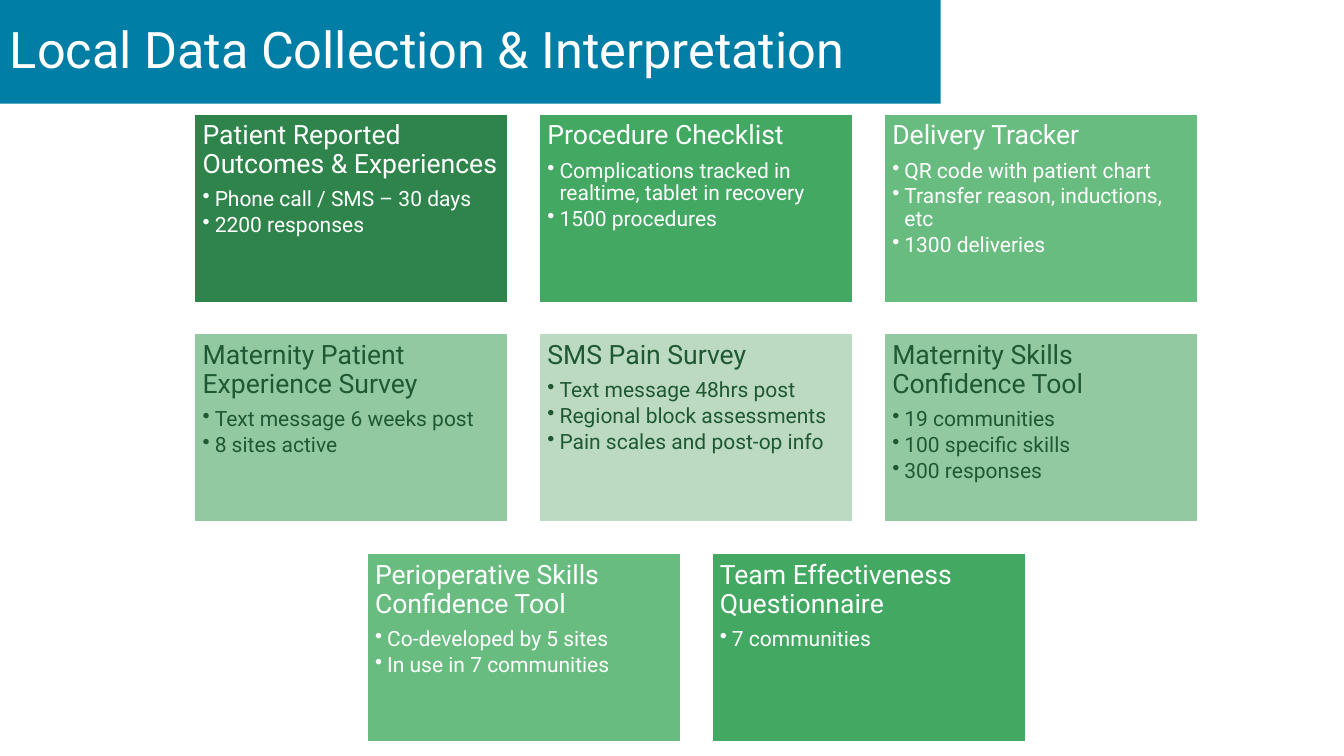
import pptx
import pptx.util
import pptx.oxml.ns
import pptx.dml.color
import pptx.enum.shapes
import pptx.enum.text
import lxml.etree
from dataclasses import dataclass

Inches = pptx.util.Inches
Pt = pptx.util.Pt


@dataclass(frozen=True)
class Theme:
    font: str = "Roboto"
    title: int = 36
    head: int = 19
    body: int = 15
    blue: str = "007EA5"
    white: str = "FFFFFF"
    ink: str = "1F5933"
    forest: str = "2E844B"
    green: str = "42A862"
    mid: str = "68BC7F"
    light: str = "93C9A1"
    pale: str = "BCDAC2"


THEME = Theme()
CARD_W, CARD_H = 3.11, 1.87
STEP_X, STEP_Y = 3.42, 2.18
LEFT, TOP = 1.93, 1.13
COLS = 3

ROWS = [
    [
        (THEME.forest, THEME.white, "Patient Reported Outcomes & Experiences",
         ["Phone call / SMS – 30 days", "2200 responses"]),
        (THEME.green, THEME.white, "Procedure Checklist",
         ["Complications tracked in realtime, tablet in recovery", "1500 procedures"]),
        (THEME.mid, THEME.white, "Delivery Tracker",
         ["QR code with patient chart", "Transfer reason, inductions, etc",
          "1300 deliveries"]),
    ],
    [
        (THEME.light, THEME.ink, "Maternity Patient Experience Survey",
         ["Text message 6 weeks post", "8 sites active"]),
        (THEME.pale, THEME.ink, "SMS Pain Survey",
         ["Text message 48hrs post", "Regional block assessments",
          "Pain scales and post-op info"]),
        (THEME.light, THEME.ink, "Maternity Skills Confidence Tool",
         ["19 communities", "100 specific skills", "300 responses"]),
    ],
    [
        (THEME.mid, THEME.white, "Perioperative Skills Confidence Tool",
         ["Co-developed by 5 sites", "In use in 7 communities"]),
        (THEME.green, THEME.white, "Team Effectiveness Questionnaire",
         ["7 communities"]),
    ],
]


def rgb(code):
    return pptx.dml.color.RGBColor.from_string(code)


class Deck:
    def __init__(self, theme, slide):
        self.theme = theme
        self.slide = slide

    def box(self, left, top, width, height, fill):
        shape = self.slide.shapes.add_shape(
            pptx.enum.shapes.MSO_SHAPE.RECTANGLE,
            Inches(left), Inches(top), Inches(width), Inches(height))
        shape.shadow.inherit = False
        shape.fill.solid()
        shape.fill.fore_color.rgb = rgb(fill)
        shape.line.fill.background()
        shape.text_frame.word_wrap = True
        return shape

    def label(self, para, text, size, color, after=0):
        para.text = text
        para.alignment = pptx.enum.text.PP_ALIGN.LEFT
        para.line_spacing = 0.9
        para.space_after = Pt(size * after)
        para.font.name = self.theme.font
        para.font.size = Pt(size)
        para.font.color.rgb = rgb(color)

    def bullet(self, para):
        para.level = 1
        props = para._p.get_or_add_pPr()
        props.set("marL", str(Inches(0.12)))
        props.set("indent", str(Inches(-0.12)))
        mark = lxml.etree.SubElement(props, pptx.oxml.ns.qn("a:buChar"))
        mark.set("char", "•")

    def title(self, text):
        frame = self.box(0, 0, 9.33, 1.03, self.theme.blue).text_frame
        frame.vertical_anchor = pptx.enum.text.MSO_ANCHOR.MIDDLE
        self.label(frame.paragraphs[0], text, self.theme.title, self.theme.white)

    def card(self, left, top, fill, color, head, items):
        shape = self.box(left, top, CARD_W, CARD_H, fill)
        shape.line.color.rgb = rgb(self.theme.white)
        shape.line.width = Pt(1)
        frame = shape.text_frame
        frame.vertical_anchor = pptx.enum.text.MSO_ANCHOR.TOP
        frame.margin_left = frame.margin_right = Inches(0.08)
        frame.margin_top = frame.margin_bottom = Inches(0.08)
        self.label(frame.paragraphs[0], head, self.theme.head, color, 0.35)
        for item in items:
            para = frame.add_paragraph()
            self.bullet(para)
            self.label(para, item, self.theme.body, color, 0.15)


def main():
    show = pptx.Presentation()
    show.slide_width = Inches(13.33)
    show.slide_height = Inches(7.5)
    deck = Deck(THEME, show.slides.add_slide(show.slide_layouts[6]))
    deck.title("Local Data Collection & Interpretation")
    for row, cards in enumerate(ROWS):
        start = LEFT + (COLS - len(cards)) * STEP_X / 2
        for col, card in enumerate(cards):
            deck.card(start + col * STEP_X, TOP + row * STEP_Y, *card)
    show.save("out.pptx")


if __name__ == "__main__":
    main()
